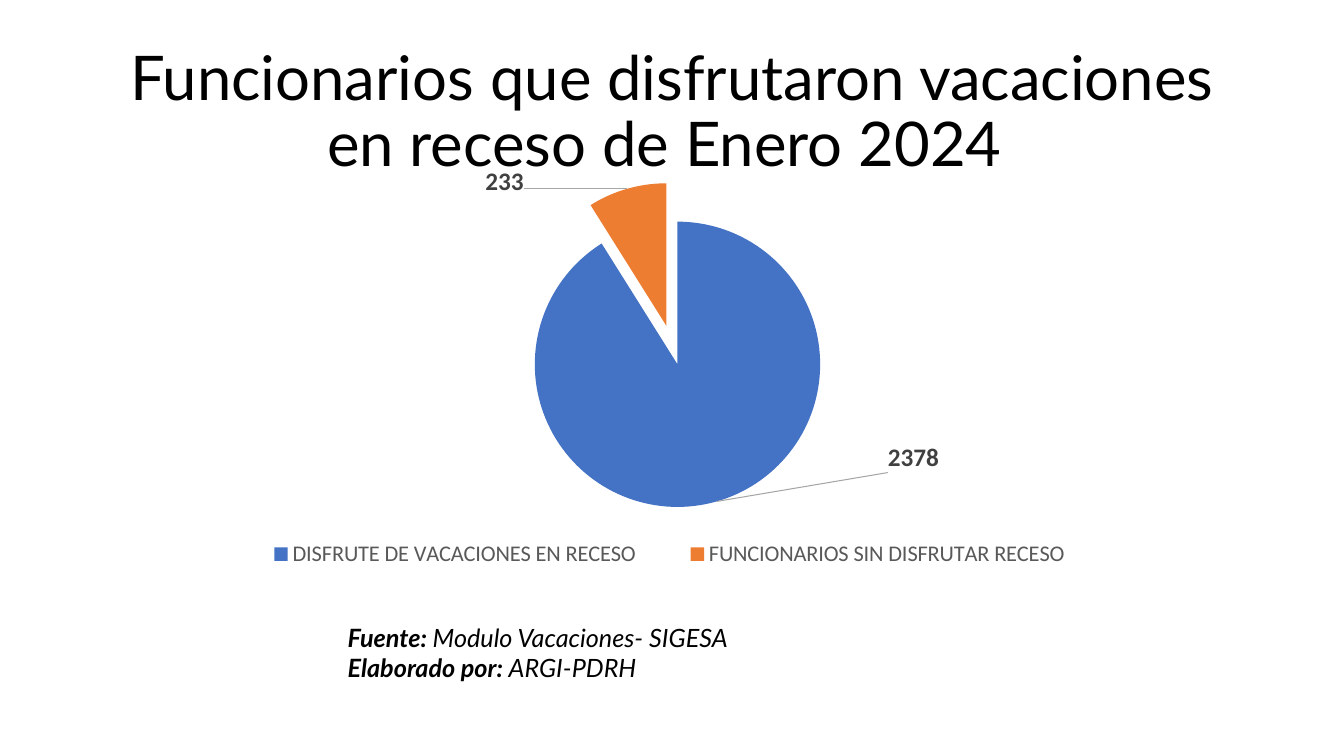
from lxml import etree
from pptx import Presentation
from pptx import util as u
from pptx.chart.data import CategoryChartData
from pptx.dml.color import RGBColor
from pptx.enum import chart as ch
from pptx.enum import text
from pptx.oxml import parse_xml
from pptx.oxml.ns import nsdecls, qn

BLACK = RGBColor(0x00, 0x00, 0x00)
LABEL_GREY = RGBColor(0x40, 0x40, 0x40)
LEGEND_GREY = RGBColor(0x59, 0x59, 0x59)
BLUE = RGBColor(0x44, 0x72, 0xC4)
ORANGE = RGBColor(0xED, 0x7D, 0x31)


def manual_layout(**settings):
    """Build a c:layout element; settings are its children in schema order."""
    layout = parse_xml(f"<c:layout {nsdecls('c')}><c:manualLayout/></c:layout>")
    for name, value in settings.items():
        etree.SubElement(layout[0], qn(f"c:{name}")).set("val", str(value))
    return layout


def style_font(font, name, size, color, bold=False):
    font.name = name
    font.size = u.Pt(size)
    font.color.rgb = color
    font.bold = bold


presentation = Presentation()
presentation.slide_width = u.Inches(13.33)
presentation.slide_height = u.Inches(7.5)
slide = presentation.slides.add_slide(presentation.slide_layouts[5])

# Title
title = slide.shapes.title
title.left, title.top = u.Inches(0.92), u.Inches(0.4)
title.width, title.height = u.Inches(11.5), u.Inches(1.45)
title.text_frame.text = "Funcionarios que disfrutaron vacaciones en receso de Enero 2024 "
title.text_frame.word_wrap = True
title.text_frame.auto_size = text.MSO_AUTO_SIZE.NONE
title.text_frame.vertical_anchor = text.MSO_ANCHOR.MIDDLE
paragraph = title.text_frame.paragraphs[0]
paragraph.alignment = text.PP_ALIGN.CENTER
paragraph.line_spacing = 0.9
style_font(paragraph.font, "Lato", 44, BLACK)

# Pie chart
data = CategoryChartData()
data.categories = ["DISFRUTE DE VACACIONES EN RECESO ", "FUNCIONARIOS SIN DISFRUTAR RECESO "]
data.add_series("Series 1", (2378, 233))
chart = slide.shapes.add_chart(
    ch.XL_CHART_TYPE.PIE, u.Inches(1.07), u.Inches(1.35), u.Inches(11.19), u.Inches(4.61), data
).chart
chart.has_title = False
style_font(chart.font, "Calibri", 10, BLACK)
chart.has_legend = True
legend = chart.legend
legend.position = ch.XL_LEGEND_POSITION.BOTTOM
legend.include_in_layout = False
style_font(legend.font, "Calibri", 16, LEGEND_GREY)
legend._element.find(qn("c:legendPos")).addnext(
    manual_layout(xMode="edge", yMode="edge", x=0.11, y=0.86, w=0.78, h=0.08))

plot = chart.plots[0]
plot.vary_by_categories = True
plot_area = plot._element.getparent()
for layout in plot_area.findall(qn("c:layout")):
    plot_area.remove(layout)
plot_area.insert(0, manual_layout(
    layoutTarget="inner", xMode="edge", yMode="edge", x=0.1, y=0.1, w=0.8, h=0.7))

series = plot.series[0]
labels = series.data_labels
labels.show_value = True
labels.position = ch.XL_LABEL_POSITION.BEST_FIT
style_font(labels.font, "Calibri", 18, LABEL_GREY, True)
for index, (color, shift_x, shift_y) in enumerate([(BLUE, 0.15, -0.14), (ORANGE, -0.09, 0.03)]):
    point = series.points[index]
    point.format.fill.solid()
    point.format.fill.fore_color.rgb = color
    style_font(point.data_label.font, "Calibri", 18, LABEL_GREY, True)
    point.data_label.position = ch.XL_LABEL_POSITION.BEST_FIT
    label = labels._element.findall(qn("c:dLbl"))[index]
    label.find(qn("c:idx")).addnext(manual_layout(x=shift_x, y=shift_y))

leader_switch = labels._element.find(qn("c:showLeaderLines"))
if leader_switch is None:
    leader_switch = etree.SubElement(labels._element, qn("c:showLeaderLines"))
leader_switch.set("val", "1")
leader_switch.addnext(parse_xml(
    f'<c:leaderLines {nsdecls("c", "a")}><c:spPr><a:ln w="9525"><a:solidFill>'
    '<a:srgbClr val="A6A6A6"/></a:solidFill></a:ln></c:spPr></c:leaderLines>'))
explosion = parse_xml(f'<c:explosion {nsdecls("c")} val="14"/>')
series._element.find(qn("c:dPt")).addprevious(explosion)

# Source note
note = slide.shapes.add_textbox(u.Inches(2.76), u.Inches(6.12), u.Inches(6.67), u.Inches(0.71))
note.text_frame.word_wrap = True
note.text_frame.auto_size = text.MSO_AUTO_SIZE.SHAPE_TO_FIT_TEXT
credits = [("Fuente: ", "Modulo Vacaciones- SIGESA"), ("Elaborado por: ", "ARGI-PDRH")]
for index, (heading, detail) in enumerate(credits):
    paragraph = note.text_frame.add_paragraph() if index else note.text_frame.paragraphs[0]
    paragraph._p.get_or_add_pPr().set("marL", str(u.Inches(0.59)))
    style_font(paragraph.font, "Lato", 18, BLACK)
    paragraph.font.italic = True
    for content, bold in ((heading, True), (detail, False)):
        run = paragraph.add_run()
        run.text = content
        run.font.bold = bold

presentation.save("out.pptx")
